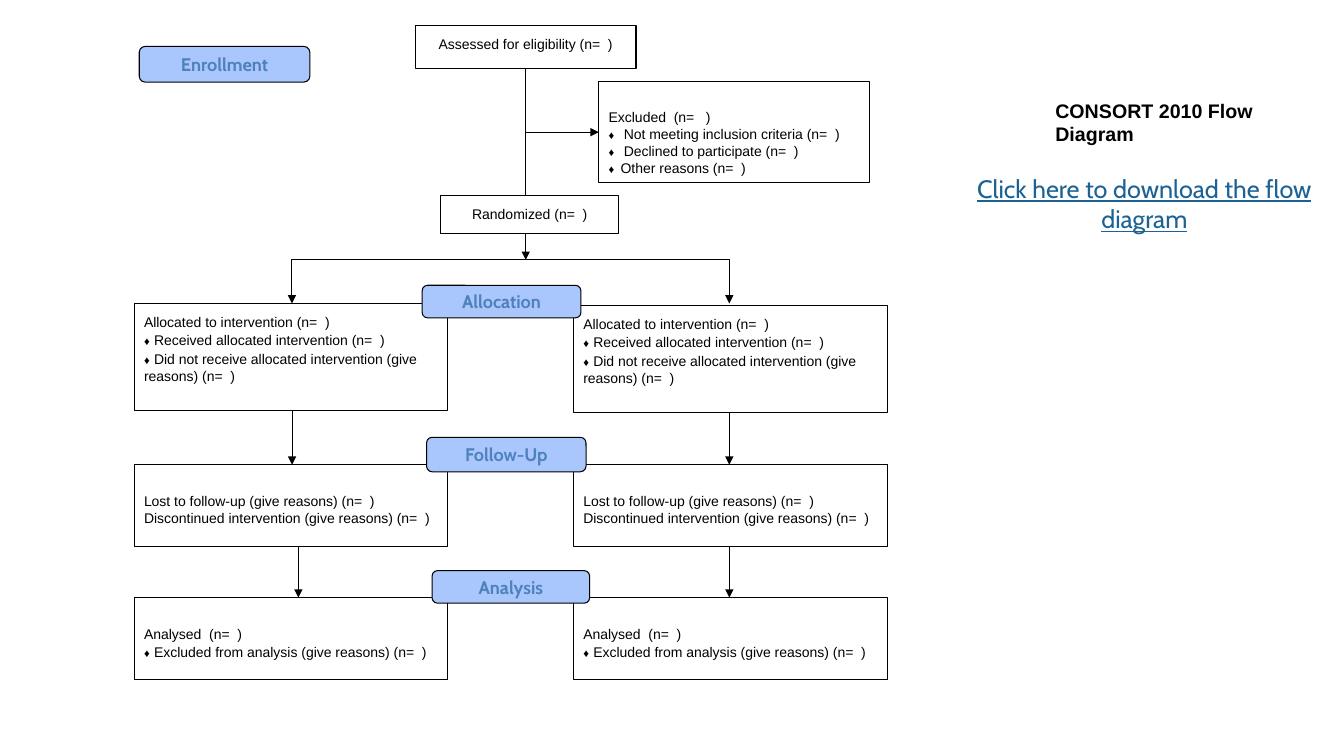
from pptx import Presentation
from pptx.dml.color import RGBColor
from pptx.enum.shapes import MSO_CONNECTOR, MSO_SHAPE
from pptx.enum.text import MSO_ANCHOR, MSO_AUTO_SIZE, PP_ALIGN
from pptx.oxml.ns import qn
from pptx.util import Cm, Pt
from lxml import etree

RECT, ROUND = MSO_SHAPE.RECTANGLE, MSO_SHAPE.ROUNDED_RECTANGLE
LINE, BENT = MSO_CONNECTOR.STRAIGHT, MSO_CONNECTOR.ELBOW
LEFT, MID = PP_ALIGN.LEFT, PP_ALIGN.CENTER
COLORS = {"ink": "000000", "paper": "FFFFFF", "pill": "A9C7FD",
          "label": "4F81BD", "link": "1C6294"}
RGB = {name: RGBColor.from_string(code) for name, code in COLORS.items()}

deck = Presentation()
deck.slide_width, deck.slide_height = Cm(33.87), Cm(19.05)
slide = deck.slides.add_slide(deck.slide_layouts[5])


def add_box(kind, place, fill, inset, top):
    box = slide.shapes.add_shape(kind, *map(Cm, place))
    box.shadow.inherit = False
    box.fill.solid()
    box.fill.fore_color.rgb = RGB[fill]
    box.line.color.rgb = RGB["ink"]
    box.line.width = Pt(0.75)
    frame = box.text_frame
    frame.word_wrap = True
    frame.margin_left = frame.margin_right = frame.margin_bottom = Cm(inset)
    frame.margin_top = Cm(top)
    frame.vertical_anchor = MSO_ANCHOR.TOP
    return frame


def set_font(font, name, size, color, bold=False):
    font.name, font.size, font.bold = name, Pt(size), bold
    font.color.rgb = RGB[color]


# Title
title = slide.shapes.title
title.left, title.top, title.width, title.height = map(Cm, (26.34, 2.03, 7.59, 1.45))
frame = title.text_frame
frame.text = "CONSORT 2010 Flow Diagram"
frame.auto_size = MSO_AUTO_SIZE.NONE
frame.word_wrap = True
frame.vertical_anchor = MSO_ANCHOR.TOP
frame.margin_top = Cm(0.45)
frame.paragraphs[0].alignment = LEFT
set_font(frame.paragraphs[0].font, "Arial", 14, "ink", True)

# Download line
frame = slide.shapes.add_textbox(Cm(23.9), Cm(4.24), Cm(9.88), Cm(1.8)).text_frame
frame.word_wrap = True
frame.text = "Click here to download the flow diagram"
frame.paragraphs[0].alignment = MID
set_font(frame.paragraphs[0].font, "Cabin", 18, "link")
frame.paragraphs[0].font.underline = True

# Arrows: kind, start, end
LEFT_X, RIGHT_X, TRUNK = 7.36, 18.38, 13.25
arrows = [
    (LINE, (TRUNK, 1.73), (TRUNK, 6.55)),
    (LINE, (TRUNK, 3.33), (15.09, 3.33)),
    (BENT, (13.84, 6.55), (LEFT_X, 7.65)),
    (BENT, (11.91, 6.55), (RIGHT_X, 7.65)),
    (LINE, (LEFT_X, 10.36), (LEFT_X, 11.71)),
    (LINE, (RIGHT_X, 10.4), (RIGHT_X, 11.71)),
    (LINE, (7.52, 13.78), (7.52, 15.06)),
    (LINE, (RIGHT_X, 13.78), (RIGHT_X, 15.06)),
]
for kind, start, end in arrows:
    arrow = slide.shapes.add_connector(kind, *map(Cm, start + end))
    arrow.line.color.rgb = RGB["ink"]
    arrow.line.width = Pt(0.75)
    props = arrow._element.spPr
    if kind == BENT:
        props.find(qn("a:prstGeom")).set("prst", "bentConnector2")
    etree.SubElement(props.find(qn("a:ln")), qn("a:tailEnd"), type="triangle")
    etree.SubElement(props, qn("a:effectLst"))

# Boxes: place, top inset, alignment, size of the gap after a mark, lines
allot = ["Allocated to intervention (n=  )",
         "♦ Received allocated intervention (n=  )",
         "♦ Did not receive allocated intervention (give reasons) (n=  )"]
follow = ["Lost to follow-up (give reasons) (n=  )",
          "Discontinued intervention (give reasons) (n=  )"]
study = ["Analysed  (n=  )", "♦ Excluded from analysis (give reasons) (n=  )"]
boxes = [
    ((10.46, 0.64, 5.57, 1.09), 0.25, MID, 8, ["Assessed for eligibility (n=  )"]),
    ((15.09, 2.06, 6.83, 2.55), 0.68, LEFT, 8,
     ["Excluded  (n=   )", "♦   Not meeting inclusion criteria (n=  )",
      "♦   Declined to participate (n=  )", "♦  Other reasons (n=  )"]),
    ((11.11, 4.93, 4.48, 0.95), 0.25, MID, 8, ["Randomized (n=  )"]),
]
for x, y in ((3.38, 7.65), (14.45, 7.7)):
    boxes += [((x, y, 7.91, 2.7), 0.25, LEFT, 11, allot),
              ((x, 11.71, 7.91, 2.07), 0.7, LEFT, 11, follow),
              ((x, 15.06, 7.91, 2.07), 0.7, LEFT, 11, study)]
for place, top, align, gap, lines in boxes:
    frame = add_box(RECT, place, "paper", 0.25, top)
    for i, line in enumerate(lines):
        para = frame.paragraphs[0] if i == 0 else frame.add_paragraph()
        para.alignment = align
        words = line.lstrip("♦").lstrip()
        lead = line[:len(line) - len(words)]
        for text, size in ((lead[:1], 8), (lead[1:], gap), (words, 10)):
            if text:
                run = para.add_run()
                run.text = text
                set_font(run.font, "Arial", size, "ink")

# Stage labels
stages = [("Enrollment", (3.51, 1.17, 4.3, 0.9)),
          ("Allocation", (10.64, 7.19, 4, 0.82)),
          ("Follow-Up", (10.75, 11.02, 4.02, 0.87)),
          ("Analysis", (10.89, 14.38, 3.97, 0.82))]
for name, place in stages:
    frame = add_box(ROUND, place, "pill", 0.13, 0.13)
    frame.vertical_anchor = MSO_ANCHOR.MIDDLE
    frame.text = name
    frame.paragraphs[0].alignment = MID
    set_font(frame.paragraphs[0].font, "Cabin", 13, "label", True)

deck.save("out.pptx")
